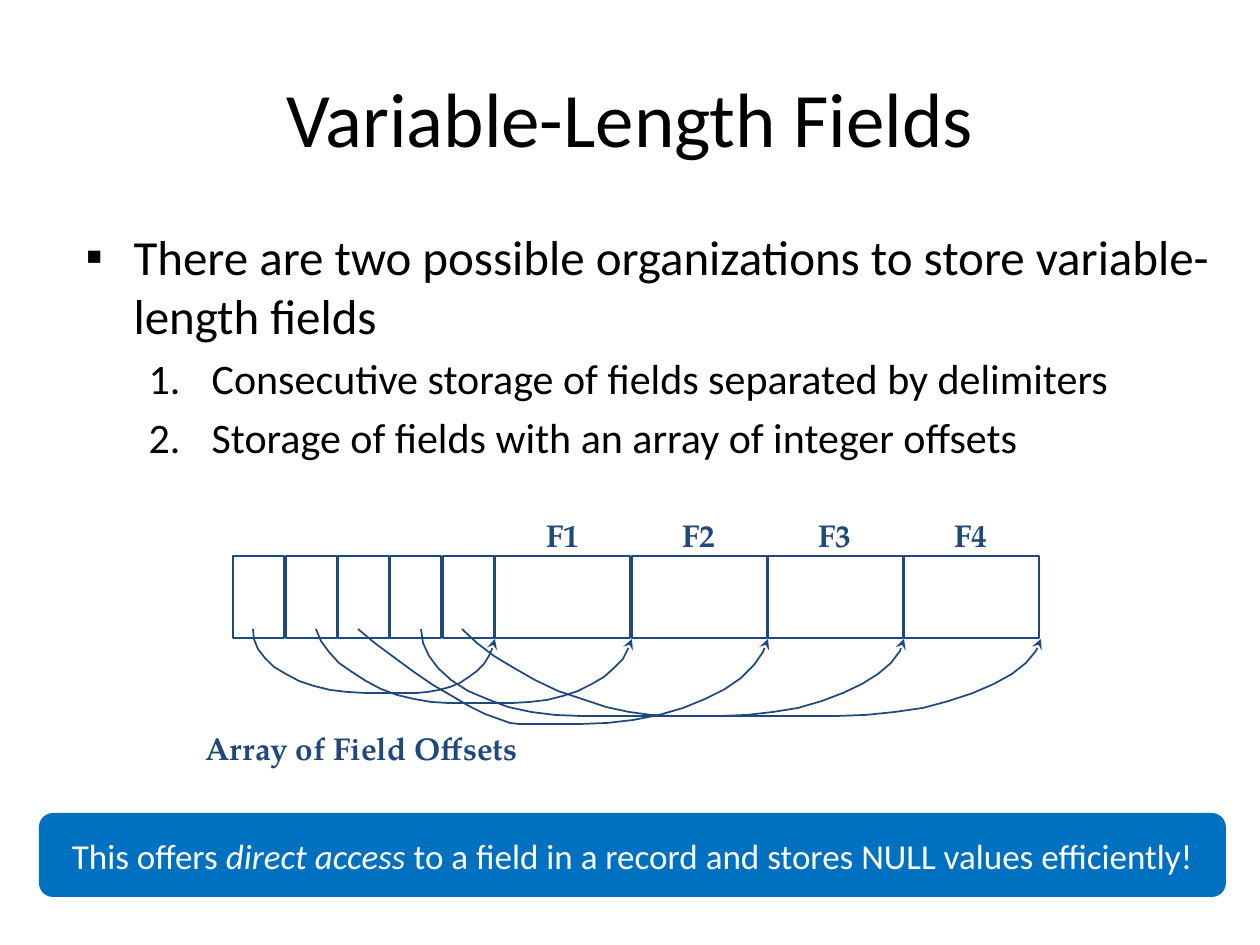
from dataclasses import dataclass
from math import cos, pi, sin

from lxml import etree
from pptx import Presentation
from pptx.dml.color import RGBColor
from pptx.enum.shapes import MSO_SHAPE
from pptx.enum.text import MSO_ANCHOR, PP_ALIGN
from pptx.oxml.ns import qn
from pptx.util import Emu, Pt

RECTANGLE, ROUNDED = MSO_SHAPE.RECTANGLE, MSO_SHAPE.ROUNDED_RECTANGLE
CENTER, MIDDLE = PP_ALIGN.CENTER, MSO_ANCHOR.MIDDLE

PX = 914400 / 126
COLORS = {"text": "000000", "diagram": "1F497D", "banner": "0070C0", "banner_text": "FFFFFF"}
BODY_FONT, DIAGRAM_FONT = "Calibri", "TeX Gyre Pagella"


@dataclass(frozen=True)
class Box:
    left: int
    top: int
    width: int
    height: int

    def emu(self) -> list[Emu]:
        return [px(v) for v in (self.left, self.top, self.width, self.height)]


@dataclass(frozen=True)
class CellRow:
    left: int
    pitch: float
    cell_width: int
    count: int


@dataclass(frozen=True)
class Pointer:
    """A sagging curve; bow runs from 0 (straight descent) to 1 (elliptic)."""
    start: int
    low_left: int
    low_right: int
    low: int
    bow: float


CELL_TOP, CELL_HEIGHT = 556, 82
OFFSETS = CellRow(233, 52.5, 51, 5)
FIELDS = CellRow(495, 136.5, 135, 4)
FIELD_LABEL_PITCH = 136

POINTER_TOP, POINTER_TIP, CURVE_STEPS = 629, 639, 10
POINTERS = [
    Pointer(253, 365, 417, 693, 1),
    Pointer(316, 448, 513, 703, 0.8),
    Pointer(358, 519, 580, 724, 0.3),
    Pointer(421, 580, 721, 716, 1),
    Pointer(462, 672, 837, 716, 0.6),
]


def px(value: float) -> Emu:
    return Emu(round(value * PX))


def color(role: str) -> RGBColor:
    return RGBColor.from_string(COLORS[role])


def format_runs(paragraph, size: int, role: str, font: str = BODY_FONT, bold: bool = False) -> None:
    for run in paragraph.runs:
        run.font.size, run.font.name, run.font.bold = Pt(size), font, bold
        run.font.color.rgb = color(role)


def place(shape, box: Box) -> None:
    shape.left, shape.top, shape.width, shape.height = box.emu()


def set_bullet(paragraph, indent: int, hanging: int, tag: str, **attributes: str) -> None:
    properties = paragraph._p.get_or_add_pPr()
    properties.set("marL", str(px(indent)))
    properties.set("indent", str(-px(hanging)))
    etree.SubElement(properties, qn(tag), **attributes)


def outline(shape) -> None:
    """Leave only a thin line in the diagram colour."""
    shape.shadow.inherit = False
    shape.fill.background()
    shape.line.color.rgb = color("diagram")
    shape.line.width = Pt(1)


def add_title(slide) -> None:
    title = slide.shapes.title
    place(title, Box(63, 38, 1134, 157))
    title.text_frame.text = "Variable-Length Fields"
    title.text_frame.vertical_anchor = MIDDLE
    heading = title.text_frame.paragraphs[0]
    heading.alignment = CENTER
    format_runs(heading, 44, "text")


def add_organizations(slide) -> None:
    body = slide.placeholders[1]
    place(body, Box(73, 220, 1187, 706))
    frame = body.text_frame
    frame.text = "There are two possible organizations to store variable-length fields"
    statement = frame.paragraphs[0]
    format_runs(statement, 28, "text")
    set_bullet(statement, 48, 48, "a:buChar", char="▪")
    for option in ("Consecutive storage of fields separated by delimiters",
                   "Storage of fields with an array of integer offsets"):
        item = frame.add_paragraph()
        item.text, item.level = option, 1
        format_runs(item, 24, "text")
        set_bullet(item, 126, 63, "a:buAutoNum", type="arabicPeriod")


def add_label(slide, box: Box, text: str, wrap: bool = False):
    label = slide.shapes.add_textbox(*box.emu())
    label.text_frame.word_wrap = wrap
    label.text_frame.text = text
    paragraph = label.text_frame.paragraphs[0]
    format_runs(paragraph, 18, "diagram", DIAGRAM_FONT, bold=True)
    return paragraph


def add_field_names(slide) -> None:
    names = [f"F{number}" for number in range(1, FIELDS.count + 1)]
    paragraph = add_label(slide, Box(534, 510, 480, 50), "\t".join(names), wrap=True)
    tabs = etree.SubElement(paragraph._p.get_or_add_pPr(), qn("a:tabLst"))
    for index in range(1, len(names)):
        etree.SubElement(tabs, qn("a:tab"), pos=str(px(index * FIELD_LABEL_PITCH)), algn="l")


def add_cells(slide) -> None:
    record = slide.shapes.add_group_shape()
    for row in (OFFSETS, FIELDS):
        for index in range(row.count):
            box = Box(round(row.left + index * row.pitch), CELL_TOP, row.cell_width, CELL_HEIGHT)
            outline(record.shapes.add_shape(RECTANGLE, *box.emu()))


def descent(x: float, y: float, low_x: float, low_y: float, bow: float) -> list[tuple[float, float]]:
    """Points from (x, y) down to the flat bottom at (low_x, low_y)."""
    points = []
    for step in range(CURVE_STEPS + 1):
        angle = step / CURVE_STEPS * pi / 2
        across = bow * (1 - cos(angle)) + (1 - bow) * sin(angle)
        points.append((x + (low_x - x) * across, y + (low_y - y) * sin(angle)))
    return points


def add_pointers(slide) -> None:
    group = slide.shapes.add_group_shape()
    for index, pointer in enumerate(POINTERS):
        boundary = FIELDS.left + index * FIELDS.pitch
        falling = descent(pointer.start, POINTER_TOP, pointer.low_left, pointer.low, pointer.bow)
        rising = descent(boundary, POINTER_TIP, pointer.low_right, pointer.low, 0.9)[::-1]
        builder = group.shapes.build_freeform(*falling[0], scale=PX)
        builder.add_line_segments(falling[1:] + rising, close=False)
        curve = builder.convert_to_shape()
        outline(curve)
        etree.SubElement(curve.line._get_or_add_ln(), qn("a:tailEnd"), type="stealth")


def add_banner(slide) -> None:
    banner = slide.shapes.add_shape(ROUNDED, *Box(39, 813, 1187, 84).emu())
    banner.shadow.inherit = False
    banner.fill.solid()
    banner.fill.fore_color.rgb = color("banner")
    banner.line.fill.background()
    banner.text_frame.word_wrap = True
    banner.text_frame.vertical_anchor = MIDDLE
    message = banner.text_frame.paragraphs[0]
    message.alignment = CENTER
    for text, italic in (("This offers ", False), ("direct access ", True),
                         ("to a field in a record and stores NULL values efficiently!", False)):
        run = message.add_run()
        run.text, run.font.italic = text, italic
    format_runs(message, 20, "banner_text")


def main() -> None:
    deck = Presentation()
    deck.slide_width, deck.slide_height = px(1260), px(945)
    slide = deck.slides.add_slide(deck.slide_layouts[1])
    add_title(slide)
    add_organizations(slide)
    add_field_names(slide)
    add_cells(slide)
    add_pointers(slide)
    add_label(slide, Box(193, 723, 343, 50), "Array of Field Offsets")
    add_banner(slide)
    deck.save("out.pptx")


if __name__ == "__main__":
    main()
